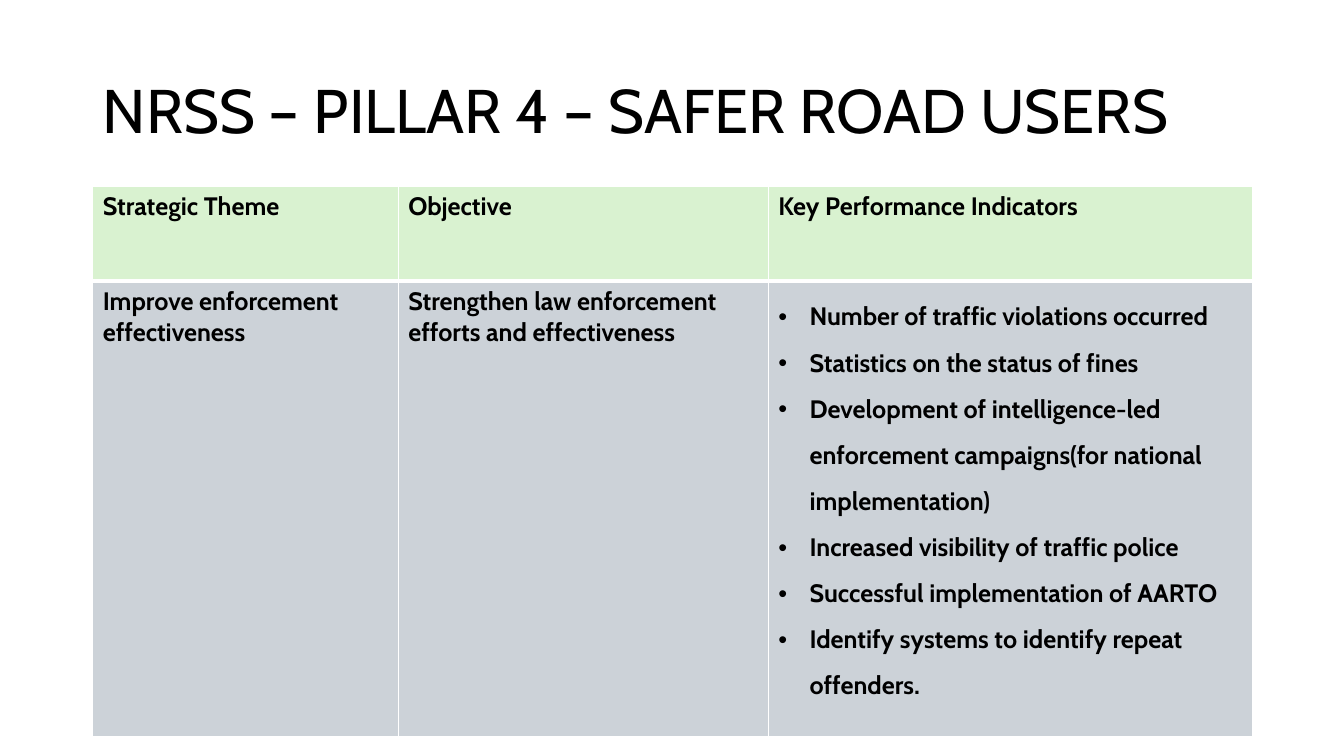
from lxml.etree import SubElement
from pptx import Presentation
from pptx.dml.color import RGBColor
from pptx.enum.text import MSO_ANCHOR
from pptx.oxml.ns import qn
from pptx.util import Inches, Pt

FONT = "Cabin"
BLACK, WHITE, GREEN, GREY = "000000", "FFFFFF", "D9F2D0", "CCD2D8"
LEFT, WIDTH = 0.92, 11.5
COLUMNS = [3.03, 3.67, 4.8]
ROWS = [0.94, 4.52]
HEADINGS = ["Strategic Theme", "Objective", "Key Performance Indicators"]
THEME = "Improve enforcement effectiveness"
OBJECTIVE = "Strengthen law enforcement efforts and effectiveness"
INDICATORS = [
    "Number of traffic violations occurred",
    "Statistics on the status of fines",
    "Development of intelligence-led enforcement campaigns(for national implementation)",
    "Increased visibility of traffic police",
    "Successful implementation of AARTO",
    "Identify systems to identify repeat offenders.",
]


def color(value):
    return RGBColor.from_string(value)


def format_runs(tf, size, bold=False):
    for p in tf.paragraphs:
        for r in p.runs:
            r.font.name = FONT
            r.font.size = Pt(size)
            r.font.bold = bold
            r.font.color.rgb = color(BLACK)


def add_title(s, text):
    tf = s.shapes.add_textbox(Inches(LEFT), Inches(0.4), Inches(WIDTH), Inches(1.45)).text_frame
    tf.word_wrap = True
    tf.vertical_anchor = MSO_ANCHOR.MIDDLE
    tf.text = text
    tf.paragraphs[0].line_spacing = 0.9
    format_runs(tf, 44)


def add_borders(cell, bottom):
    """Draw white borders, 1 point wide except at the bottom."""
    tcPr = cell._tc.get_or_add_tcPr()
    for side, width in zip("LRTB", (1, 1, 1, bottom)):
        ln = SubElement(tcPr, qn(f"a:ln{side}"), w=str(Pt(width)))
        fill = SubElement(ln, qn("a:solidFill"))
        SubElement(fill, qn("a:srgbClr"), val=WHITE)


def add_bullet(p):
    pPr = p._p.get_or_add_pPr()
    indent = Inches(0.31)
    pPr.set("marL", str(indent))
    pPr.set("indent", str(-indent))
    p.line_spacing = 1.5
    SubElement(pPr, qn("a:buFont"), typeface="Arial")
    SubElement(pPr, qn("a:buChar"), char="•")


def fill_cell(cell, text, fill, bottom):
    add_borders(cell, bottom)
    cell.fill.solid()
    cell.fill.fore_color.rgb = color(fill)
    cell.text_frame.text = text
    format_runs(cell.text_frame, 18, bold=True)


def add_pillar_table(s):
    table = s.shapes.add_table(len(ROWS), len(COLUMNS), Inches(LEFT), Inches(1.85),
                               Inches(WIDTH), Inches(sum(ROWS))).table
    for column, width in zip(table.columns, COLUMNS):
        column.width = Inches(width)
    for row, height in zip(table.rows, ROWS):
        row.height = Inches(height)
    body = [THEME, OBJECTIVE, "\n".join(INDICATORS)]
    for i, (texts, fill, bottom) in enumerate([(HEADINGS, GREEN, 3), (body, GREY, 1)]):
        for j, text in enumerate(texts):
            fill_cell(table.cell(i, j), text, fill, bottom)
    for p in table.cell(1, 2).text_frame.paragraphs:
        add_bullet(p)


def main():
    prs = Presentation()
    prs.slide_width, prs.slide_height = Inches(13.33), Inches(7.5)
    s = prs.slides.add_slide(prs.slide_layouts[6])
    add_title(s, "NRSS – PILLAR 4 – SAFER ROAD USERS")
    add_pillar_table(s)
    prs.save("out.pptx")


if __name__ == "__main__":
    main()
